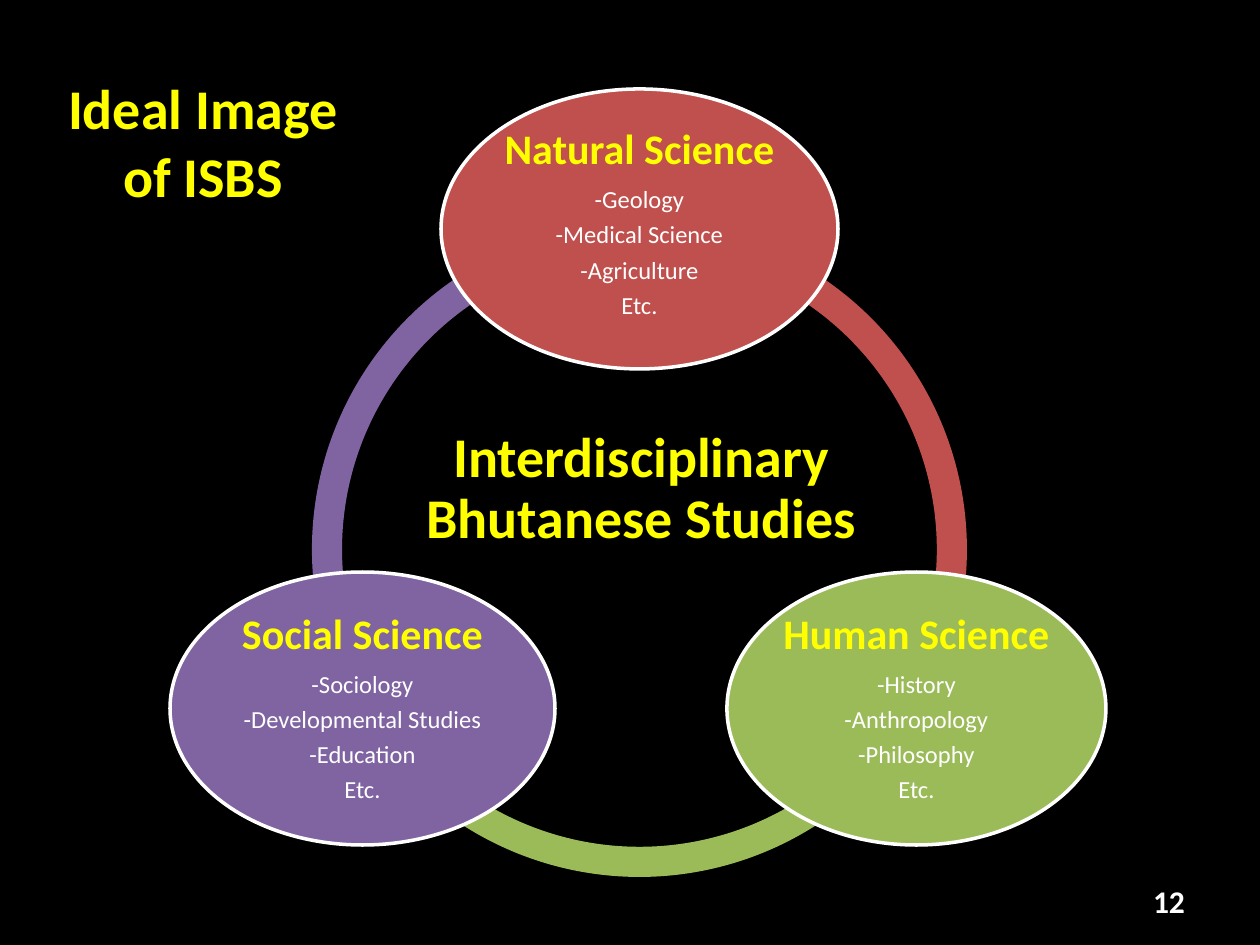
from pptx import Presentation
from pptx.dml.color import RGBColor
from pptx.enum.shapes import MSO_SHAPE
from pptx.enum.text import MSO_ANCHOR, MSO_AUTO_SIZE, PP_ALIGN
from pptx.util import Emu, Pt

SCALE = 914400 / 126
RED, GREEN, PURPLE = "C0504D", "9BBB59", "8064A2"
YELLOW, WHITE, BLACK = "FFFF00", "FFFFFF", "000000"


def px(*lengths):
    return [Emu(round(n * SCALE)) for n in lengths]


def rgb(color):
    return RGBColor.from_string(color)


def add_text(tf, text, size=14, color=WHITE, bold=False, align=PP_ALIGN.CENTER,
             line=None, after=0):
    """Fill the first paragraph if it is still empty, otherwise append one."""
    p = tf.paragraphs[0]
    if p.runs:
        p = tf.add_paragraph()
    p.alignment = align
    p.space_before, p.space_after = Pt(0), Pt(after)
    if line:
        p.line_spacing = line
    r = p.add_run()
    r.text = text
    r.font.name, r.font.size, r.font.bold = "Calibri", Pt(size), bold
    r.font.color.rgb = rgb(color)


def frame(sp, anchor=MSO_ANCHOR.MIDDLE, inset=0, bottom=None):
    tf = sp.text_frame
    tf.word_wrap = True
    tf.auto_size = MSO_AUTO_SIZE.NONE
    tf.vertical_anchor = anchor
    tf.margin_left, tf.margin_top, tf.margin_right, tf.margin_bottom = px(
        inset, inset, inset, inset if bottom is None else bottom)
    return tf


def add_filled(s, kind, box, color):
    sp = s.shapes.add_shape(kind, *px(*box))
    sp.shadow.inherit = False
    sp.fill.solid()
    sp.fill.fore_color.rgb = rgb(color)
    sp.line.fill.background()
    return sp


def add_title(s, box, text):
    sp = s.shapes.title
    sp.left, sp.top, sp.width, sp.height = px(*box)
    add_text(frame(sp, MSO_ANCHOR.TOP, inset=8), text, 32, YELLOW, True)


def add_ring(s, box, label):
    """Three arcs of a third of a circle each, with a label in the middle."""
    # Arc angles are in units of 100000/60000 degrees: 18 is 30 degrees.
    for start, end, color in [(90, 162, PURPLE), (18, 90, GREEN), (162, 18, RED)]:
        arc = add_filled(s, MSO_SHAPE.BLOCK_ARC, box, color)
        for i, value in enumerate((start, end, 0.046)):
            arc.adjustments[i] = value
    x, y, w, h = box
    sp = s.shapes.add_textbox(*px(x + 90, y + 220, w - 176, 96))
    add_text(frame(sp), label, 32, YELLOW, True, line=0.9)


def add_field(s, box, color, heading, topics, lift=0):
    sp = add_filled(s, MSO_SHAPE.OVAL, box, color)
    sp.line.color.rgb = rgb(WHITE)
    sp.line.width = Pt(2)
    tf = frame(sp, bottom=lift)
    add_text(tf, heading, 24, YELLOW, True, line=0.9, after=8)
    for topic in topics:
        add_text(tf, topic, line=0.9, after=5)


def add_page_number(s, box, number):
    sp = s.shapes.add_textbox(*px(*box))
    add_text(frame(sp, inset=12), number, 18, bold=True, align=PP_ALIGN.RIGHT)


def main():
    prs = Presentation()
    prs.slide_width, prs.slide_height = px(1260, 945)
    s = prs.slides.add_slide(prs.slide_layouts[5])
    s.background.fill.solid()
    s.background.fill.fore_color.rgb = rgb(BLACK)

    add_title(s, (44, 66, 318, 145), "Ideal Image of ISBS")
    add_ring(s, (312, 222, 655, 655), "Interdisciplinary Bhutanese Studies")
    add_field(s, (441, 89, 397, 280), RED, "Natural Science",
              ["-Geology", "-Medical Science", "-Agriculture", "Etc."], lift=10)
    add_field(s, (727, 572, 379, 273), GREEN, "Human Science",
              ["-History", "-Anthropology", "-Philosophy", "Etc."])
    add_field(s, (170, 572, 385, 273), PURPLE, "Social Science",
              ["-Sociology", "-Developmental Studies", "-Education", "Etc."])
    add_page_number(s, (903, 876, 294, 50), "12")
    prs.save("out.pptx")


if __name__ == "__main__":
    main()
